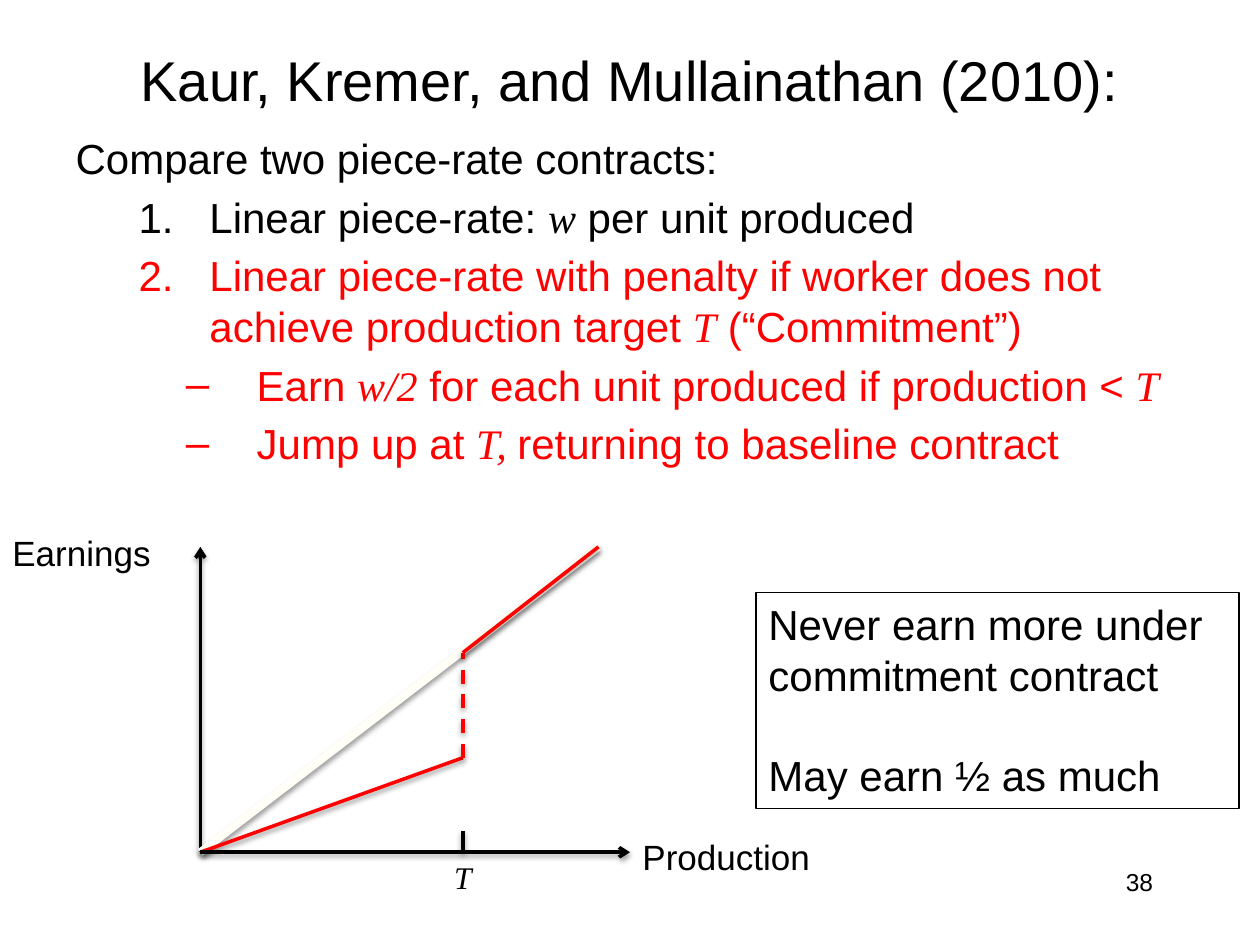
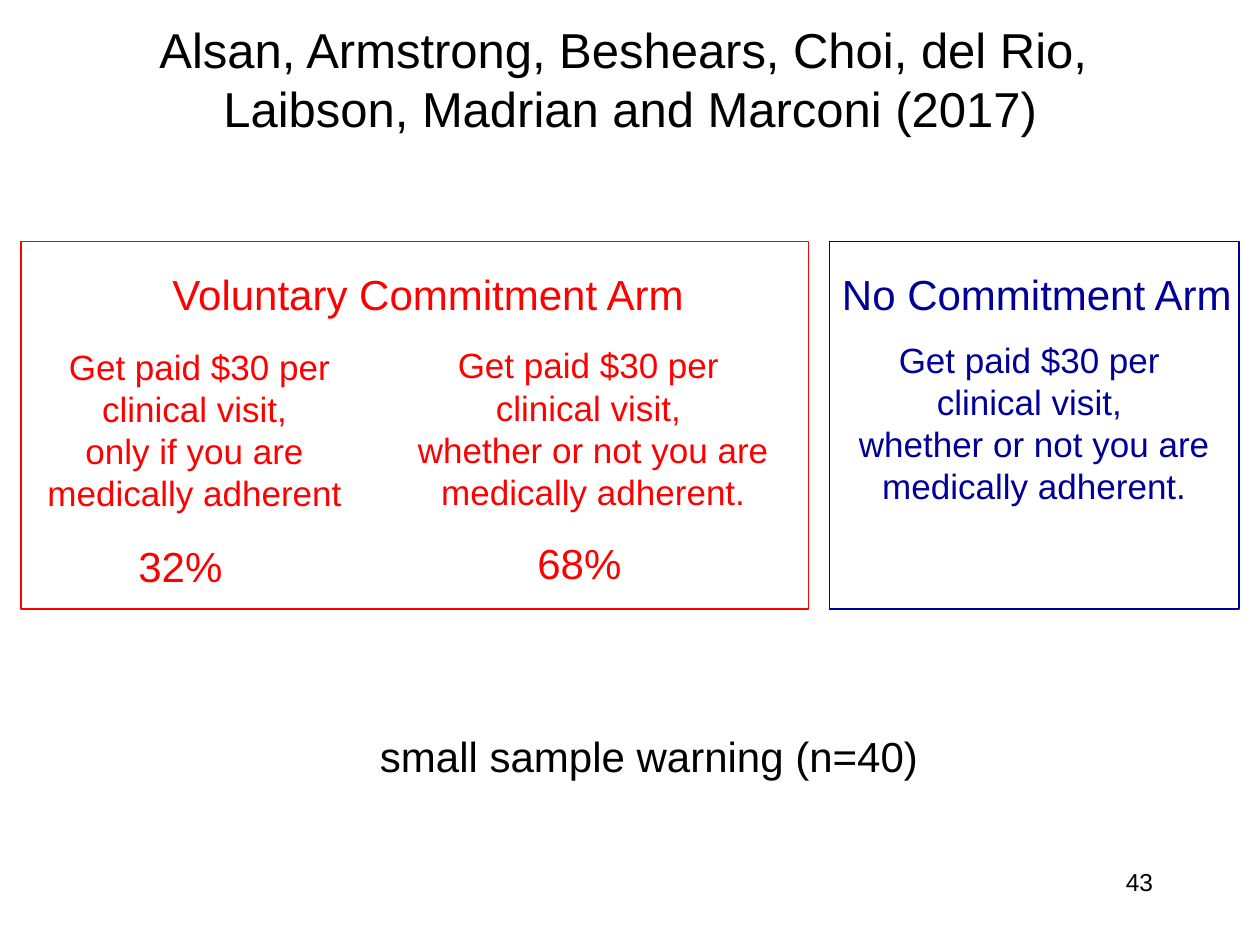
from lxml import etree
from pptx import Presentation
from pptx.dml.color import RGBColor
from pptx.enum import dml, shapes, text
from pptx.oxml import ns
from pptx.util import Pt

BLACK, RED, NAVY, CREAM = "000000", "FF0000", "000099", "FFFFF7"
SANS, SERIF = "Arial", "Times New Roman"
CENTER, LEFT, RIGHT = text.PP_ALIGN.CENTER, text.PP_ALIGN.LEFT, text.PP_ALIGN.RIGHT
TITLE_ONLY, TITLE_AND_BODY = 5, 1


def color(code):
    return RGBColor.from_string(code)


def add_xml(parent, tag, **attributes):
    return etree.SubElement(parent, ns.qn(tag), attributes)


def place(item, left, top, width, height):
    item.left, item.top, item.width, item.height = map(Pt, (left, top, width, height))


def style(font, size, code, name=SANS, italic=None):
    font.size, font.name, font.italic = Pt(size), name, italic
    font.color.rgb = color(code)


def write(frame, lines, size, code=BLACK, align=LEFT, name=SANS, italic=None):
    """Fill a text frame with one paragraph for each line."""
    frame.text = "\n".join(lines)
    for para in frame.paragraphs:
        para.alignment = align
        style(para.font, size, code, name, italic)


def add_label(parts, box, lines, size, wrap=True, **look):
    label = parts.add_textbox(*map(Pt, box))
    label.text_frame.word_wrap = wrap
    write(label.text_frame, lines, size, **look)


def add_frame(page, box, code):
    frame = page.shapes.add_shape(shapes.MSO_SHAPE.RECTANGLE, *map(Pt, box))
    frame.shadow.inherit = False
    frame.fill.background()
    frame.line.color.rgb = color(code)
    frame.line.width = Pt(0.75)
    return frame


def add_line(parts, start, end, code=BLACK, width=2, dashed=False, arrow=False):
    """Draw a straight line with a soft shadow below it."""
    line = parts.add_connector(shapes.MSO_CONNECTOR.STRAIGHT, *map(Pt, start + end))
    line.line.color.rgb = color(code)
    line.line.width = Pt(width)
    if dashed:
        line.line.dash_style = dml.MSO_LINE.DASH
    if arrow:
        add_xml(line.line._get_or_add_ln(), "a:tailEnd", type="arrow")
    effects = add_xml(line._element.spPr, "a:effectLst")
    shadow = add_xml(effects, "a:outerShdw", blurRad=str(Pt(3.1)), dist=str(Pt(1.6)),
                     dir="5400000", rotWithShape="0")
    add_xml(add_xml(shadow, "a:srgbClr", val=BLACK), "a:alpha", val="38000")


def add_page(deck, layout, title, size, number):
    page = deck.slides.add_slide(deck.slide_layouts[layout])
    place(page.shapes.title, 36, 0, 648, 90)
    frame = page.shapes.title.text_frame
    frame.vertical_anchor = text.MSO_ANCHOR.MIDDLE
    write(frame, [title], size, align=CENTER)
    add_label(page.shapes, (516, 492, 150, 36), [number], 14, align=RIGHT)
    return page


def fill_contract_list(body, box):
    """Write the outline; every second span of a line is a symbol in italics."""
    number = ("a:buAutoNum", {"type": "arabicPeriod"})
    dash = ("a:buChar", {"char": "–"})
    items = [
        (0, 27, 27, ("a:buNone", {}), BLACK, ["Compare two piece-rate contracts:"]),
        (1, 76.5, 40.5, number, BLACK, ["Linear piece-rate: ", "w", " per unit produced"]),
        (1, 76.5, 40.5, number, RED,
         ["Linear piece-rate with penalty if worker does not achieve production target ",
          "T", " (“Commitment”)"]),
        (2, 103.5, 40.5, dash, RED,
         ["Earn ", "w/2", " for each unit produced if production < ", "T"]),
        (2, 103.5, 40.5, dash, RED, ["Jump up at ", "T, ", "returning to baseline contract"]),
    ]
    place(body, *box)
    frame = body.text_frame
    frame.auto_size = text.MSO_AUTO_SIZE.NONE
    for index, (level, margin, hanging, (tag, attributes), code, spans) in enumerate(items):
        para = frame.add_paragraph() if index else frame.paragraphs[0]
        para.level = level
        settings = para._p.get_or_add_pPr()
        settings.set("marL", str(Pt(margin)))
        settings.set("indent", str(-Pt(hanging)))
        add_xml(settings, tag, **attributes)
        for position, words in enumerate(spans):
            span = para.add_run()
            span.text = words
            symbol = position % 2 == 1
            style(span.font, 24, code, SERIF if symbol else SANS, symbol)


def draw_earnings_graph(page, left, top, width, height):
    """Plot earnings against production under both contracts."""
    parts = page.shapes.add_group_shape().shapes
    bottom, right = top + height, left + width
    target = left + 150
    origin, peak = (left, bottom), (right, top)
    half_rate, full_rate = (target, bottom - 54), (target, bottom - 114)

    add_line(parts, origin, (left, top), arrow=True)
    add_line(parts, origin, peak, CREAM, width=4.5)
    add_line(parts, origin, half_rate, RED)
    add_line(parts, half_rate, full_rate, RED, dashed=True)
    add_line(parts, full_rate, peak, RED)
    add_line(parts, (target, bottom), (target, bottom - 12))
    add_line(parts, origin, (right + 18, bottom), arrow=True)

    add_label(parts, (target - 12, bottom, 30, 29), ["T"], 18, name=SERIF, italic=True)
    add_label(parts, (left - 114.5, top - 12.5, 114, 32), ["Earnings"], 20)
    add_label(parts, (right + 18, bottom - 13, 156, 32), ["Production"], 20)


def add_conclusion(page, box):
    frame = add_frame(page, box, BLACK).text_frame
    frame.word_wrap = True
    frame.vertical_anchor = text.MSO_ANCHOR.TOP
    write(frame, ["Never earn more under commitment contract", "May earn ½ as much"], 24)
    frame.paragraphs[1].space_before = Pt(28.8)


def add_arm(page, box, code, name, name_offset, name_width, offers):
    """Frame one arm of the study; an offer is (left, top, width, lines)."""
    left, top = box[:2]
    add_frame(page, box, code)
    add_label(page.shapes, (left + name_offset, top + 12, name_width, 36), [name], 24,
              wrap=False, code=code)
    for offer_left, offer_top, width, lines in offers:
        add_label(page.shapes, (left + offer_left, top + offer_top, width, 104), lines, 20,
                  code=code, align=CENTER)


def build_contracts_page(deck):
    page = add_page(deck, TITLE_AND_BODY, "Kaur, Kremer, and Mullainathan (2010):", 32, "38")
    fill_contract_list(page.placeholders[1], (36, 72, 648, 356))
    draw_earnings_graph(page, 114.5, 312.5, 227.5, 174.5)
    add_conclusion(page, (432, 338.5, 276, 123.5))


def build_arms_page(deck):
    title = "Alsan, Armstrong, Beshears, Choi, del Rio, \vLaibson, Madrian and Marconi (2017)"
    page = add_page(deck, TITLE_ONLY, title, 28, "43")
    unconditional = ["Get paid $30 per ", "clinical visit, ",
                     "whether or not you are medically adherent."]
    conditional = ["Get paid $30 per clinical visit, ", "only if you are ",
                   "medically adherent "]
    add_arm(page, (12, 138, 450, 210), RED, "Voluntary Commitment Arm", 79.5, 309.5,
            [(-6, 56, 216, conditional), (210, 55, 234, unconditional)])
    add_arm(page, (474, 138, 234, 210), NAVY, "No Commitment Arm", 0, 240,
            [(0, 52, 234, unconditional)])
    for left, top, share in ((72, 305.5, "32%"), (300, 303.5, "68%")):
        add_label(page.shapes, (left, top, 63, 36), [share], 24, wrap=False, code=RED)
    add_label(page.shapes, (210, 414, 325.5, 36), ["small sample warning (n=40)"], 24,
              wrap=False)


def main():
    deck = Presentation()
    deck.slide_width, deck.slide_height = Pt(720), Pt(540)
    build_contracts_page(deck)
    build_arms_page(deck)
    deck.save("out.pptx")


if __name__ == "__main__":
    main()
